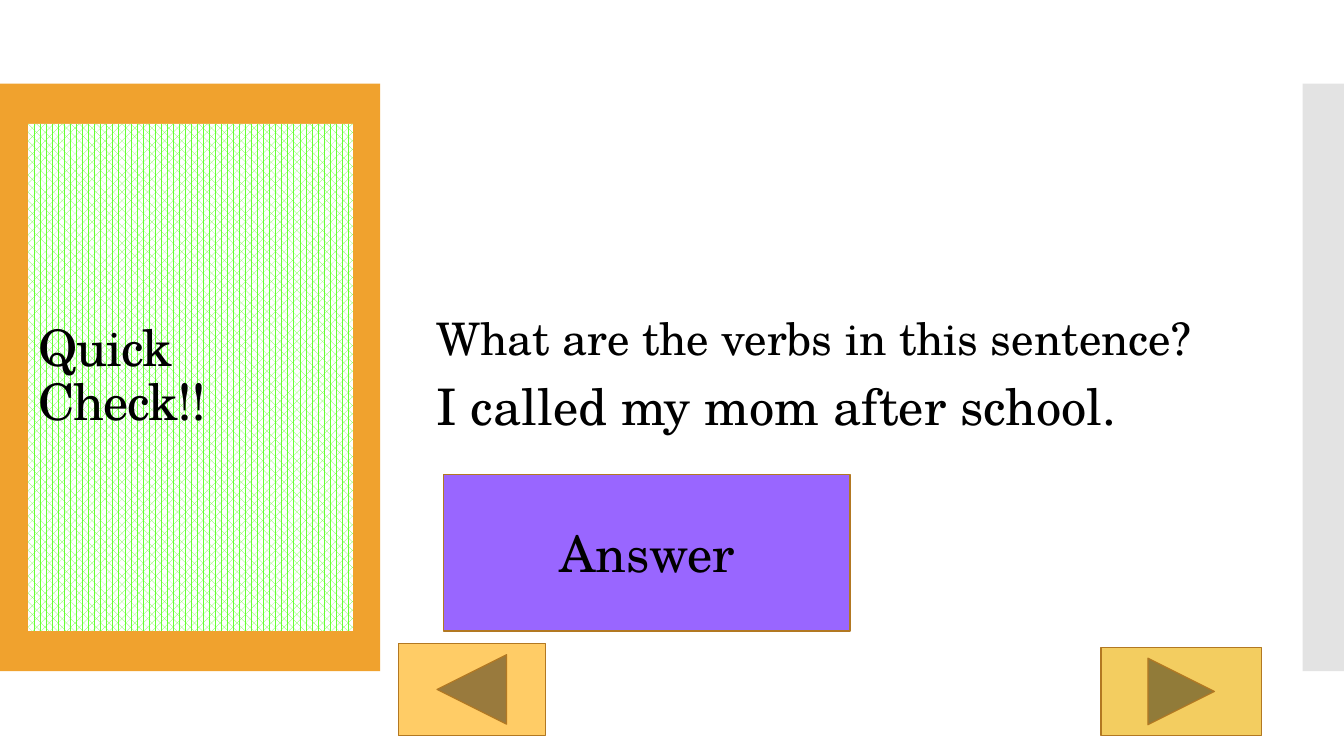
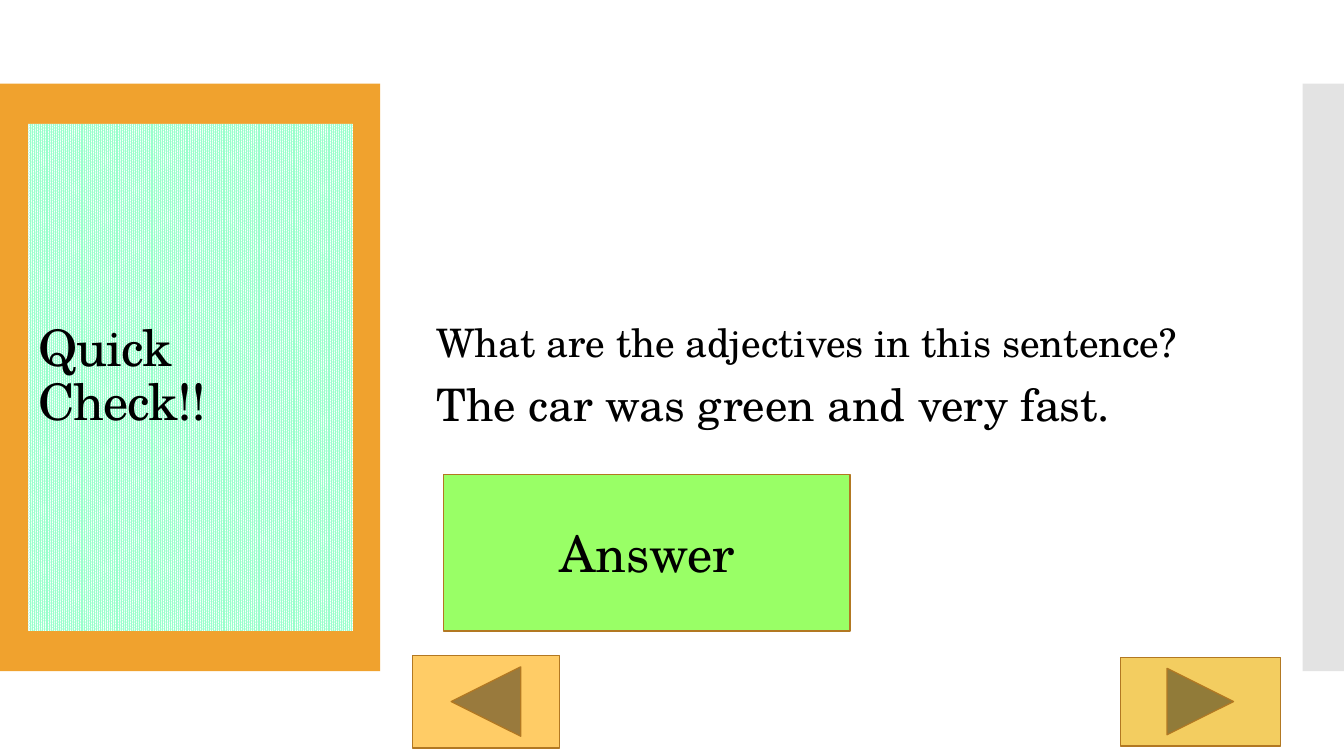
"""Build two quiz slides with a patterned title panel and answer buttons."""
from dataclasses import dataclass

from lxml.etree import SubElement
from pptx import Presentation
from pptx.dml.color import RGBColor
from pptx.enum.dml import MSO_PATTERN
from pptx.enum.shapes import MSO_SHAPE
from pptx.enum.text import MSO_ANCHOR, MSO_AUTO_SIZE, PP_ALIGN
from pptx.oxml.ns import qn
from pptx.util import Inches, Pt


@dataclass(frozen=True)
class Theme:
    """Hold the colours and type sizes of the deck."""
    font: str = "TeX Gyre Schola"
    ink: str = "000000"
    paper: str = "FFFFFF"
    band: str = "F0A22E"
    edge: str = "C8C8C8"
    rim: str = "B27822"
    back: str = "FFCC66"
    next: str = "F3CD60"
    large: int = 36
    rim_width: float = 0.85
    lead: float = 0.9
    gap: int = 12


@dataclass(frozen=True)
class Quiz:
    """Describe what differs from one quiz slide to the next."""
    lines: tuple
    pattern: MSO_PATTERN
    tint: str
    answer: str
    back: tuple
    next: tuple


THEME = Theme()
QUIZZES = (
    Quiz((("What are the verbs in this sentence?", 32),
          ("I called my mom after school.", 36)),
         MSO_PATTERN.PERCENT_60, "66FF33", "9966FF",
         (3.95, 6.38), (10.92, 6.42)),
    Quiz((("What are the adjectives in this sentence?", 28),
          ("The car was green and very fast.", 32)),
         MSO_PATTERN.PERCENT_90, "99FFCC", "99FF66",
         (4.09, 6.5), (11.11, 6.52)),
)


def rgb(code):
    """Return the colour for a hex code."""
    return RGBColor.from_string(code)


def box(slide, kind, area, fill=None, rim=None):
    """Add a flat preset shape with an optional fill and rim."""
    shape = slide.shapes.add_shape(kind, *map(Inches, area))
    shape.shadow.inherit = False
    if fill:
        shape.fill.solid()
        shape.fill.fore_color.rgb = rgb(fill)
    if rim:
        shape.line.color.rgb = rgb(rim)
        shape.line.width = Pt(THEME.rim_width)
    else:
        shape.line.fill.background()
    return shape


def write(shape, lines, align=PP_ALIGN.LEFT, lead=None, gap=0,
          anchor=MSO_ANCHOR.MIDDLE):
    """Write sized lines as paragraphs in a shape."""
    frame = shape.text_frame
    frame.word_wrap = True
    frame.vertical_anchor = anchor
    for index, (text, size) in enumerate(lines):
        para = frame.add_paragraph() if index else frame.paragraphs[0]
        para.text = text
        para.alignment = align
        para.line_spacing = lead
        para.space_before = Pt(gap)
        para.font.name = THEME.font
        para.font.size = Pt(size)
        para.font.color.rgb = rgb(THEME.ink)
    return frame


def text(slide, area, lines, **style):
    """Add a text box holding sized lines."""
    shape = slide.shapes.add_textbox(*map(Inches, area))
    return write(shape, lines, **style)


def bands(slide):
    """Add the orange band and the half clear grey edge."""
    box(slide, MSO_SHAPE.RECTANGLE, (0, 0.83, 3.77, 5.83), THEME.band)
    edge = box(slide, MSO_SHAPE.RECTANGLE, (12.92, 0.83, 0.42, 5.83),
               THEME.edge)
    color = next(edge._element.spPr.iter(qn("a:srgbClr")))
    SubElement(color, qn("a:alpha"), val="50000")


def title(slide, pattern, tint):
    """Add the patterned title panel."""
    panel = box(slide, MSO_SHAPE.RECTANGLE, (0.28, 1.23, 3.22, 5.03))
    panel.fill.patterned()
    panel.fill.pattern = pattern
    panel.fill.fore_color.rgb = rgb(tint)
    panel.fill.back_color.rgb = rgb(THEME.paper)
    frame = write(panel, [("Quick Check!!", THEME.large)], lead=THEME.lead)
    run = frame.paragraphs[0].runs[0]
    run._r.get_or_add_rPr().set("spc", "-60")


def answer(slide, fill):
    """Add the answer button and its label."""
    box(slide, MSO_SHAPE.ACTION_BUTTON_CUSTOM, (4.4, 4.71, 4.03, 1.55),
        fill, THEME.rim)
    frame = text(slide, (4.71, 5.13, 3.42, 0.71),
                 [("Answer", THEME.large)], align=PP_ALIGN.CENTER,
                 anchor=MSO_ANCHOR.TOP)
    frame.auto_size = MSO_AUTO_SIZE.SHAPE_TO_FIT_TEXT


def arrows(slide, back, ahead):
    """Add the forward and back buttons."""
    box(slide, MSO_SHAPE.ACTION_BUTTON_FORWARD_OR_NEXT,
        (*ahead, 1.59, 0.88), THEME.next, THEME.rim)
    box(slide, MSO_SHAPE.ACTION_BUTTON_BACK_OR_PREVIOUS,
        (*back, 1.46, 0.92), THEME.back, THEME.rim)


def main():
    """Build and save the deck."""
    deck = Presentation()
    deck.slide_width, deck.slide_height = Inches(13.33), Inches(7.5)
    for quiz in QUIZZES:
        slide = deck.slides.add_slide(deck.slide_layouts[6])
        bands(slide)
        title(slide, quiz.pattern, quiz.tint)
        text(slide, (4.23, 0.94, 8, 5.6), quiz.lines,
             lead=THEME.lead, gap=THEME.gap)
        answer(slide, quiz.answer)
        arrows(slide, quiz.back, quiz.next)
    deck.save("out.pptx")


if __name__ == "__main__":
    main()
